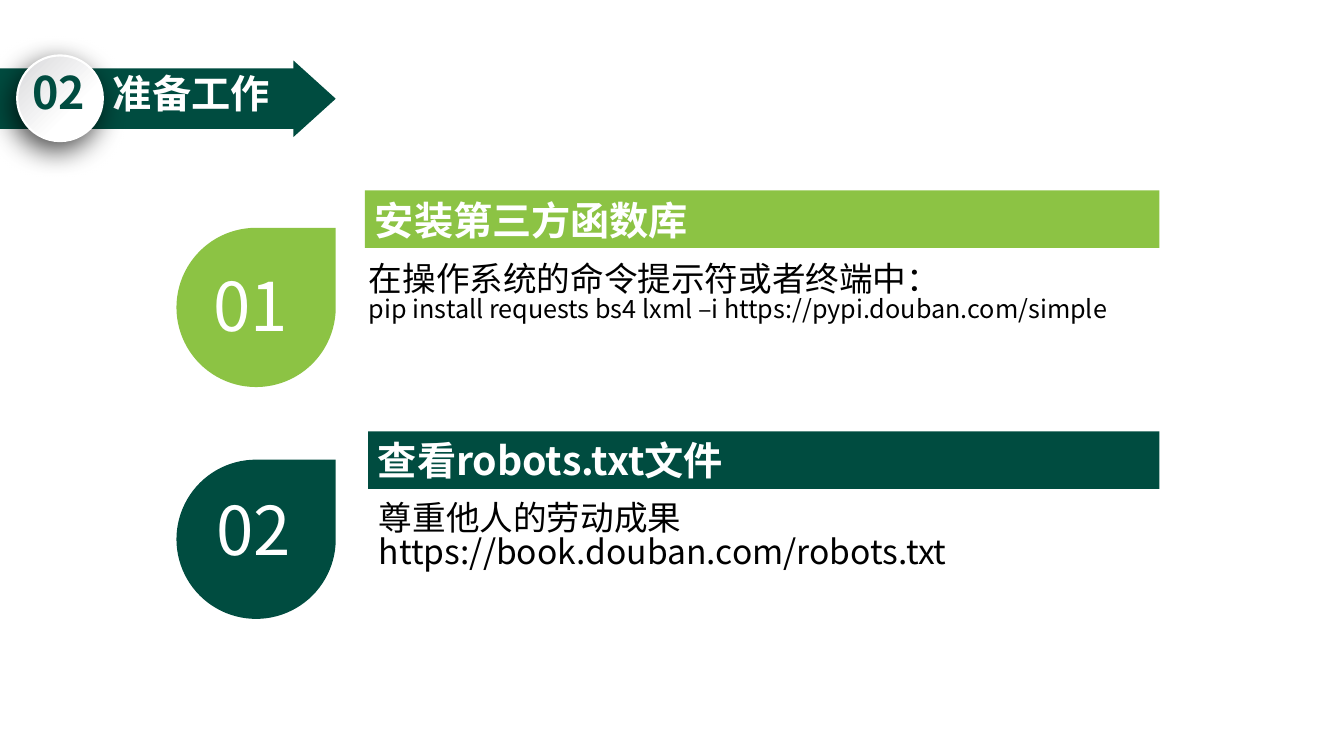
from pptx import Presentation
from pptx.dml.color import RGBColor
from pptx.enum import shapes, text
from pptx.oxml import parse_xml, ns
from pptx.util import Inches, Pt

KIND = shapes.MSO_SHAPE
HUE = {"dark": "004C40", "lime": "8CC344", "white": "FFFFFF", "black": "000000", "gray": "DBDBDD"}


class Deck:
    face = "Noto Sans CJK SC"

    def __init__(self):
        self.prs = Presentation()
        self.prs.slide_width, self.prs.slide_height = Inches(13.33), Inches(7.5)
        self.slide = self.prs.slides.add_slide(self.prs.slide_layouts[5])

    def color(self, name):
        return RGBColor.from_string(HUE[name])

    def shape(self, kind, box, hue, turn=0):
        item = self.slide.shapes.add_shape(kind, *map(Inches, box))
        item.shadow.inherit = False
        item.fill.solid()
        item.fill.fore_color.rgb = self.color(hue)
        item.line.fill.background()
        item.rotation = turn
        return item

    def letter(self, item, lines, hue, bold=False, wrap=True, mid=False, align="LEFT"):
        frame = item.text_frame
        frame.text = "\n".join(line for line, size in lines)
        frame.word_wrap = wrap
        frame.auto_size = text.MSO_AUTO_SIZE.NONE
        frame.vertical_anchor = text.MSO_ANCHOR.MIDDLE if mid else text.MSO_ANCHOR.TOP
        frame.margin_left = frame.margin_right = Inches(0.1)
        frame.margin_top, frame.margin_bottom = Inches(0.09), Inches(0.01)
        for para, (line, size) in zip(frame.paragraphs, lines):
            para.alignment = getattr(text.PP_ALIGN, align)
            para.line_spacing = 0.83
            font = para.runs[0].font
            font.name, font.size, font.bold = self.face, Pt(size), bold
            font.color.rgb = self.color(hue)
            font._element.find(ns.qn("a:latin")).addnext(
                parse_xml(f'<a:ea {ns.nsdecls("a")} typeface="{self.face}"/>'))

    def label(self, box, lines, hue, **style):
        item = self.slide.shapes.add_textbox(*map(Inches, box))
        self.letter(item, lines, hue, **style)

    def title(self, box, words):
        item = self.slide.shapes.title
        item.left, item.top, item.width, item.height = map(Inches, box)
        self.letter(item, [(words, 28)], "white", bold=True)
        self.slide.shapes._spTree.append(item._element)

    def disc(self, box):
        item = self.shape(KIND.OVAL, box, "white")
        item.line.color.rgb = self.color("white")
        item.line.width = Pt(1.5)
        props = item._element.spPr
        fill = props.find(ns.qn("a:solidFill"))
        props.replace(fill, parse_xml(
            f'<a:gradFill {ns.nsdecls("a")}><a:gsLst>'
            f'<a:gs pos="34000"><a:srgbClr val="{HUE["white"]}"/></a:gs>'
            f'<a:gs pos="96000"><a:srgbClr val="{HUE["gray"]}"/></a:gs></a:gsLst>'
            '<a:path path="circle"><a:fillToRect l="100000" t="100000"/></a:path></a:gradFill>'))
        props.find(ns.qn("a:effectLst")).append(parse_xml(
            f'<a:outerShdw {ns.nsdecls("a")} blurRad="{Pt(20)}" dist="{Pt(7)}" dir="7200000">'
            f'<a:srgbClr val="{HUE["black"]}"><a:alpha val="70000"/></a:srgbClr></a:outerShdw>'))

    def step(self, mark, hue, drop, tag, bar, head, body, lines):
        self.shape(KIND.TEAR, (1.75, drop, 1.58, 1.58), hue)
        item = self.shape(KIND.RECTANGLE, (*tag, 0.99, 0.91), hue)
        self.letter(item, [(mark, 48)], "white", wrap=False, mid=True)
        item = self.shape(KIND.RECTANGLE, (*bar, 11.5 - bar[0], 0.57), hue)
        self.letter(item, [(head, 28)], "white", bold=True, mid=True)
        self.label((*body, 7.93, 0.91), lines, "black", align="JUSTIFY")


def main():
    deck = Deck()
    deck.shape(KIND.RECTANGLE, (0, 0.68, 2.92, 0.6), "dark")
    deck.shape(KIND.ISOSCELES_TRIANGLE, (2.74, 0.77, 0.76, 0.42), "dark", turn=90)
    deck.title((1.02, 0.68, 7.76, 0.87), "准备工作")
    deck.disc((0.17, 0.55, 0.85, 0.85))
    deck.label((0.22, 0.64, 0.76, 0.64), [("02", 32)], "dark", bold=True, wrap=False)
    deck.step("01", "lime", 2.26, (2.02, 2.59), (3.62, 1.89), "安装第三方函数库", (3.56, 2.54),
              [("在操作系统的命令提示符或者终端中：", 24),
               ("pip install requests bs4 lxml –i https://pypi.douban.com/simple", 18)])
    deck.step("02", "dark", 4.56, (2.05, 4.82), (3.65, 4.28), "查看robots.txt文件", (3.66, 4.91),
              [("尊重他人的劳动成果", 24), ("https://book.douban.com/robots.txt", 24)])
    deck.prs.save("out.pptx")


if __name__ == "__main__":
    main()
